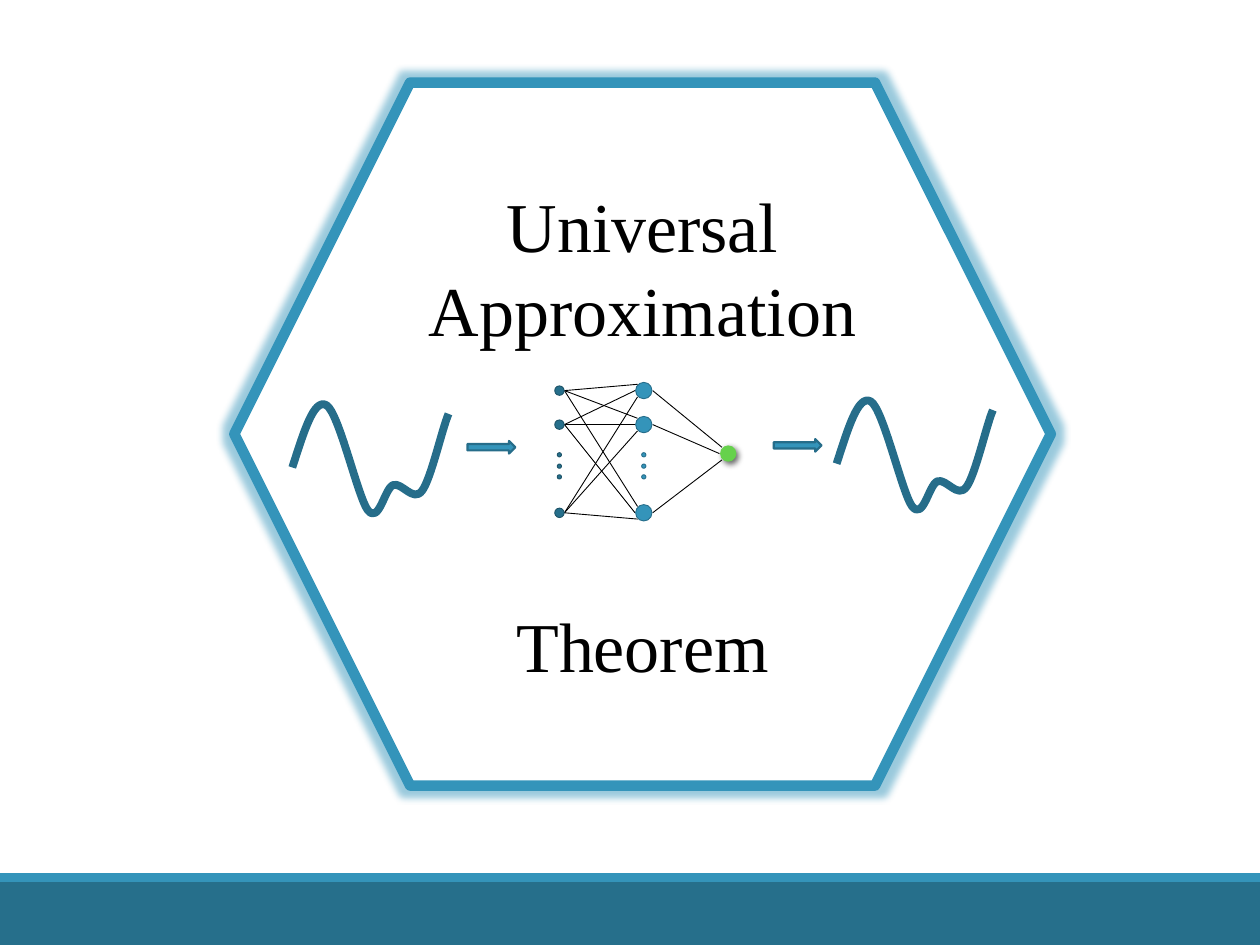
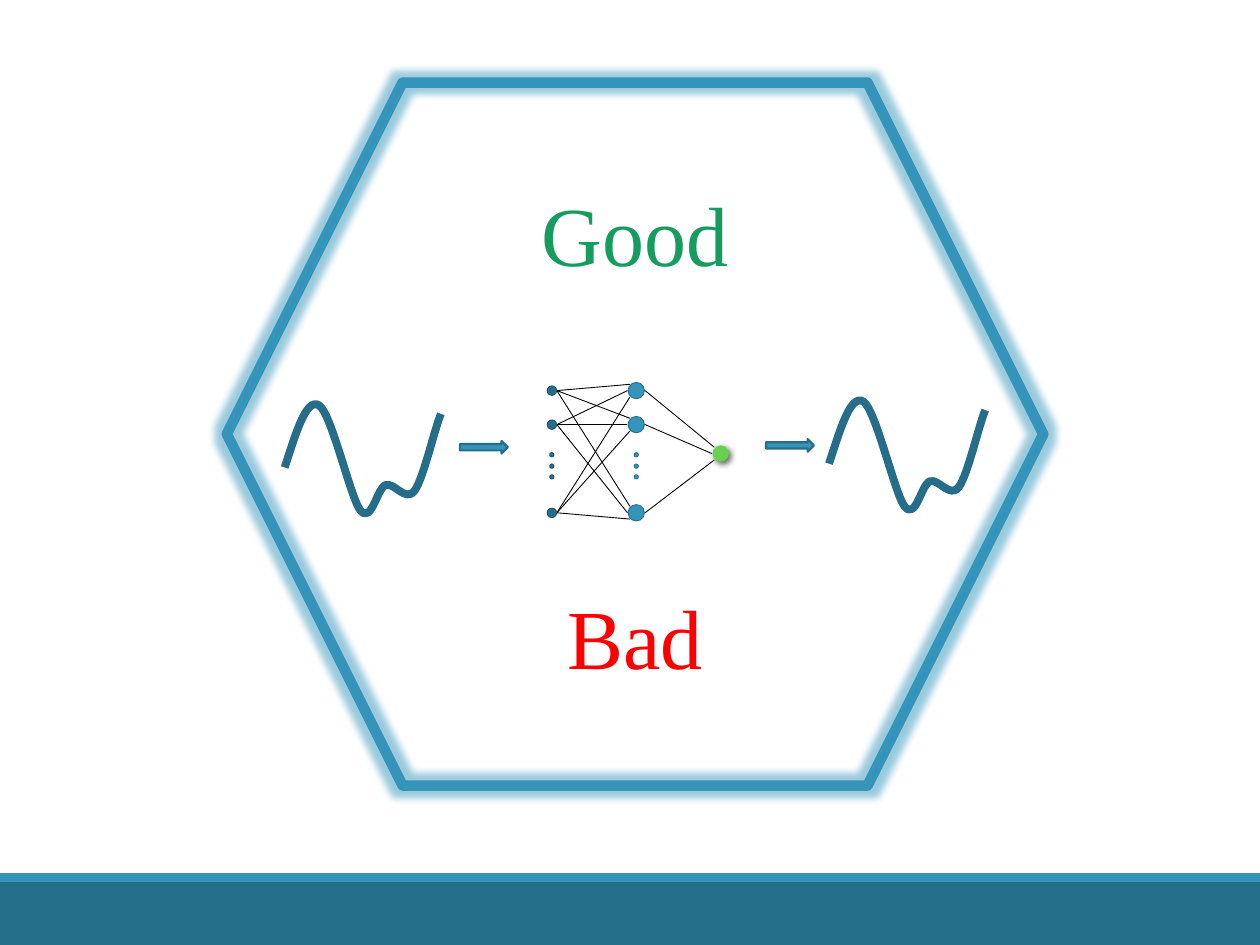
from dataclasses import dataclass

from lxml import etree
from pptx import Presentation
from pptx.dml.color import RGBColor
from pptx.enum.shapes import MSO_CONNECTOR, MSO_SHAPE
from pptx.enum.text import MSO_ANCHOR, PP_ALIGN
from pptx.oxml.ns import qn
from pptx.util import Inches, Pt

RECTANGLE = MSO_SHAPE.RECTANGLE
HEXAGON = MSO_SHAPE.HEXAGON
ELLIPSE = MSO_SHAPE.OVAL
ARROW = MSO_SHAPE.RIGHT_ARROW
STRAIGHT = MSO_CONNECTOR.STRAIGHT
MIDDLE = MSO_ANCHOR.MIDDLE
CENTER = PP_ALIGN.CENTER


@dataclass(frozen=True)
class Theme:
    font: str = "Times New Roman"
    title_size: int = 40
    verdict_size: int = 48
    leading: float = 1.2
    white: str = "FFFFFF"
    black: str = "000000"
    blue: str = "3494BA"
    deep: str = "266F8B"
    edge: str = "266D8A"
    rim: str = "1C5267"
    leaf: str = "66D14C"
    good: str = "169C5F"
    bad: str = "FF0000"
    hairline: float = 0.5
    arrow_line: float = 1.25
    curve_line: float = 4.5
    frame_line: float = 6


theme = Theme()
COLUMNS, ROWS = 100, 75
CELL = Inches(0.1)

INPUT_X, HIDDEN_X, OUTPUT_X = 44.4, 51.1, 57.8
NODE_ROWS = (31, 33.7, 40.7)
DOT_ROWS = (36.1, 37, 37.85)
OUTPUT_ROW = 36
PORTS = ((0.2, -0.5), (0, 0), (0.2, 0.5))

WAVE_START = (0, 5.05)
WAVE = (
    ((0.9, 2.3), (1.7, -0.45), (2.7, 0.1)),
    ((3.7, 0.65), (5.2, 7.4), (6, 8.45)),
    ((6.9, 9.55), (7.3, 6.75), (8, 6.45)),
    ((8.7, 6.2), (9.6, 7.85), (10.3, 6.9)),
    ((11, 6), (11.9, 1.95), (12.4, 0.8)),
)

pages = (
    (theme.title_size, theme.white, 0,
     (("Universal Approximation", theme.black), ("Theorem", theme.black))),
    (theme.verdict_size, None, -0.6,
     (("Good", theme.good), ("Bad", theme.bad))),
)


def cells(*values):
    return [round(value * CELL) for value in values]


def add_figure(shapes, kind, bounds, fill=None, line=None, width=theme.hairline):
    figure = shapes.add_shape(kind, *cells(*bounds))
    figure.shadow.inherit = False
    if fill:
        figure.fill.solid()
        figure.fill.fore_color.rgb = RGBColor.from_string(fill)
    else:
        figure.fill.background()
    if line:
        figure.line.color.rgb = RGBColor.from_string(line)
        figure.line.width = Pt(width)
    else:
        figure.line.fill.background()
    return figure


deck = Presentation()
deck.slide_width, deck.slide_height = cells(COLUMNS, ROWS)
blank = deck.slide_layouts[6]
for placeholder in list(blank.placeholders):
    blank.shapes._spTree.remove(placeholder._element)
sheets = [deck.slides.add_slide(blank) for content in pages]

for top, height, color in ((70, 5, theme.deep), (69.3, 0.7, theme.blue)):
    band = add_figure(sheets[0].shapes, RECTANGLE, (0, top, COLUMNS, height), color)
    band._element.nvSpPr.cNvPr.set("id", str(len(blank.shapes) + 2))
    blank.shapes._spTree.append(band._element)

for page, (size, frame_fill, shift, words) in zip(sheets, pages):
    emblem = page.shapes.add_group_shape()
    shapes = emblem.shapes
    frame = add_figure(shapes, HEXAGON, (18.6, 6.55, 64.8, 55.8),
                       frame_fill, theme.blue, theme.frame_line)
    effects = frame._element.spPr.find(qn("a:effectLst"))
    glow = etree.SubElement(effects, qn("a:glow"), rad=str(Pt(8)))
    tint = etree.SubElement(glow, qn("a:srgbClr"), val=theme.blue)
    etree.SubElement(tint, qn("a:alpha"), val="50000")

    box = frame.text_frame
    box.word_wrap = True
    box.vertical_anchor = MIDDLE
    pitch = size * theme.leading
    for index, (word, color) in enumerate(words):
        para = box.add_paragraph() if index else box.paragraphs[0]
        para.alignment = CENTER
        para.line_spacing = Pt(pitch)
        para.space_before = Pt(3 * pitch * index)
        span = para.add_run()
        span.text = word
        span.font.name = theme.font
        span.font.size = Pt(size)
        span.font.color.rgb = RGBColor.from_string(color)

    for left, top in ((23.2, 32.05), (66.4, 31.75)):
        anchors = [cells(left + x, top + y) for first, second, (x, y) in WAVE]
        outline = shapes.build_freeform(*cells(left + WAVE_START[0], top + WAVE_START[1]))
        outline.add_line_segments(anchors, close=False)
        wave = outline.convert_to_shape()
        wave.shadow.inherit = False
        wave.fill.background()
        wave.line.color.rgb = RGBColor.from_string(theme.edge)
        wave.line.width = Pt(theme.curve_line)
        segments = list(wave._element.iter(qn("a:lnTo")))
        for segment, bend in zip(segments, WAVE):
            segment.tag = qn("a:cubicBezTo")
            segment.remove(segment[0])
            for x, y in bend:
                x, y = cells(left + x, top + y)
                etree.SubElement(segment, qn("a:pt"), x=str(x - wave.left), y=str(y - wave.top))

    for left, top in ((37.1, 35), (61.4, 34.85)):
        add_figure(shapes, ARROW, (left, top, 3.8, 1), theme.blue, theme.edge, theme.arrow_line)

    links = [
        (INPUT_X + 0.4, source, HIDDEN_X - 0.7 + dx, target + dy)
        for target in NODE_ROWS
        for source, (dx, dy) in zip(NODE_ROWS, PORTS)
    ] + [
        (HIDDEN_X + 0.7, source, OUTPUT_X - 0.7 + dx, OUTPUT_ROW + dy)
        for source, (dx, dy) in zip(NODE_ROWS, PORTS)
    ]
    for link in links:
        wire = shapes.add_connector(STRAIGHT, *cells(*link))
        wire.line.color.rgb = RGBColor.from_string(theme.black)
        wire.line.width = Pt(theme.hairline)
        etree.SubElement(wire._element.spPr, qn("a:effectLst"))

    for center, diameter, fill, line in (
        (INPUT_X, 0.75, theme.deep, theme.rim),
        (HIDDEN_X, 1.3, theme.blue, theme.edge),
    ):
        for rows, across in ((NODE_ROWS, diameter), (DOT_ROWS, 0.34)):
            for row in rows:
                bounds = (center - across / 2, row - across / 2, across, across)
                add_figure(shapes, ELLIPSE, bounds, fill, line)

    output = add_figure(shapes, ELLIPSE, (OUTPUT_X - 0.65, OUTPUT_ROW - 0.65, 1.3, 1.3), theme.leaf)
    effects = output._element.spPr.find(qn("a:effectLst"))
    shade = etree.SubElement(effects, qn("a:outerShdw"), blurRad=str(Pt(3.5)),
                             dist=str(Pt(2)), dir="2700000", rotWithShape="0")
    tint = etree.SubElement(shade, qn("a:srgbClr"), val=theme.black)
    etree.SubElement(tint, qn("a:alpha"), val="60000")

    emblem.left += round(shift * CELL)

deck.save("out.pptx")
